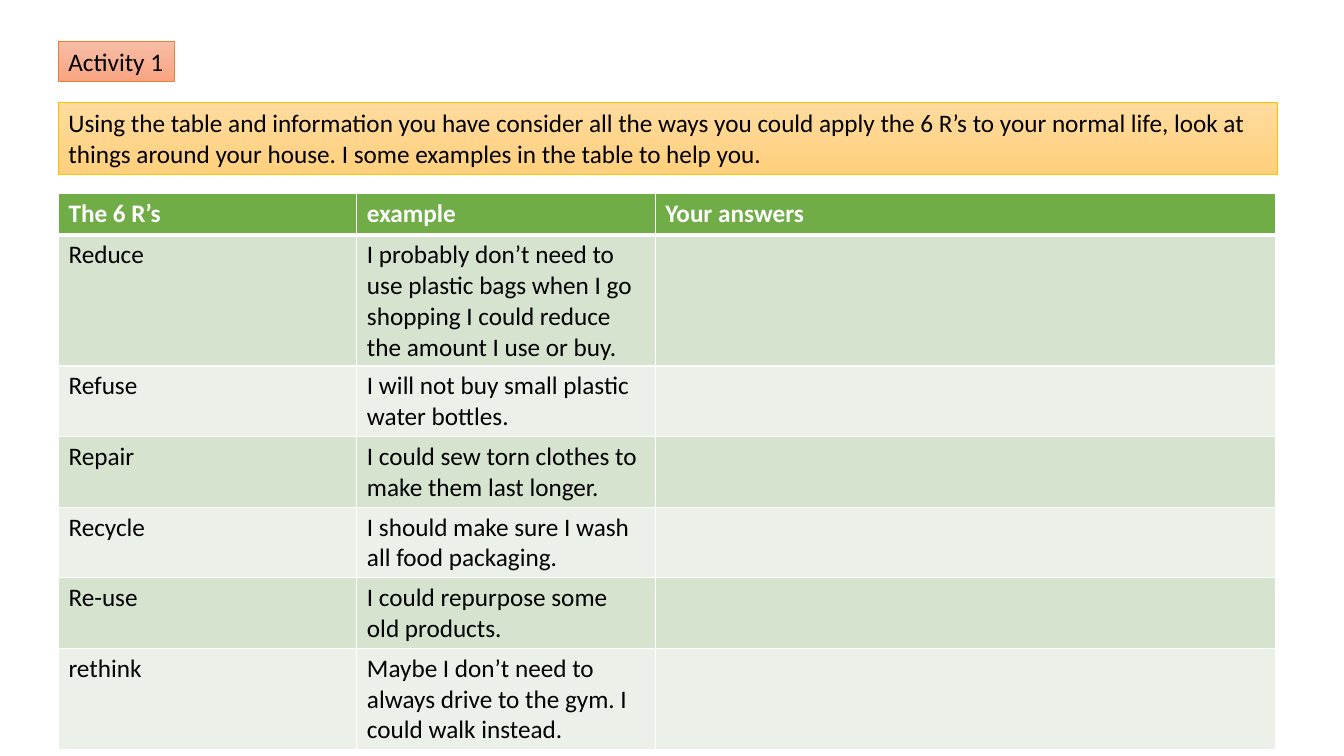
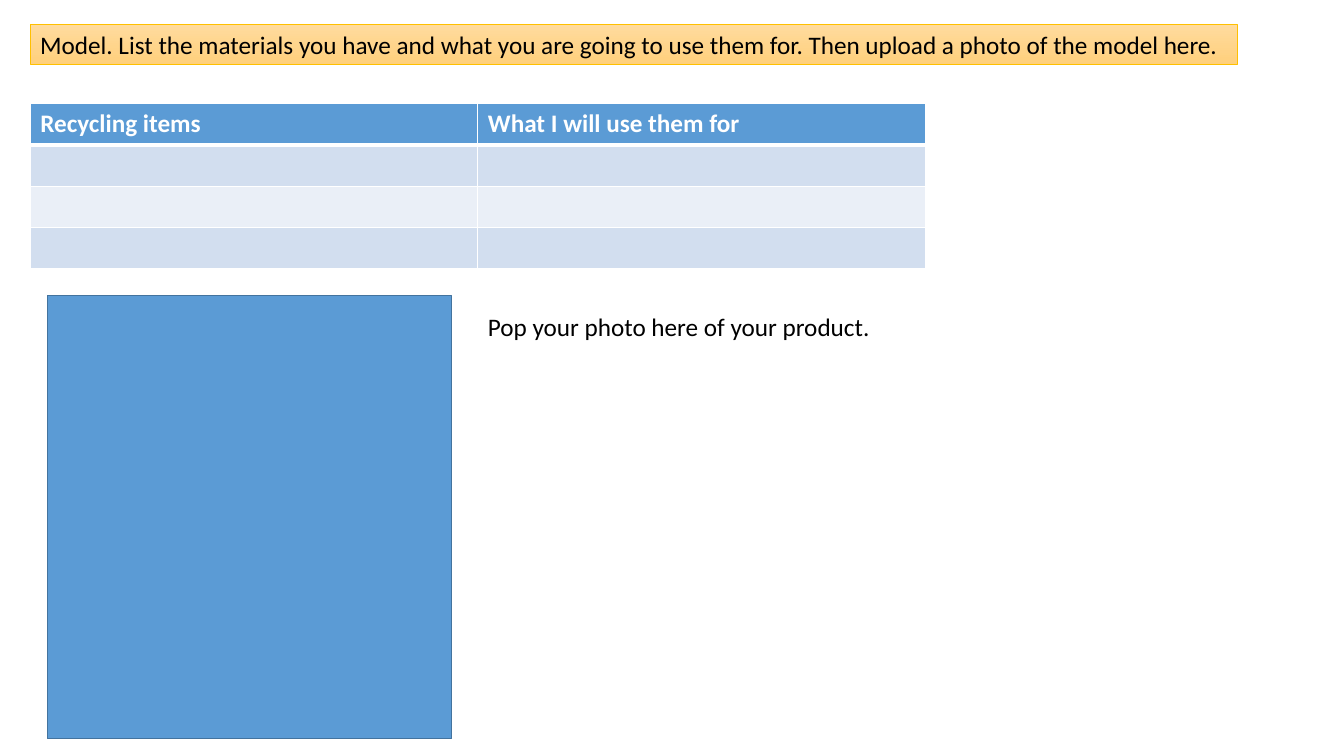
from lxml.etree import SubElement
from pptx import Presentation
from pptx.dml.color import RGBColor
from pptx.enum.shapes import MSO_SHAPE
from pptx.enum.text import MSO_ANCHOR, MSO_AUTO_SIZE
from pptx.oxml.ns import qn
from pptx.util import Pt

PX = 9144  # 100 px to the inch
ROW_H = 41
LABEL_H = 40

BLACK = RGBColor(0x00, 0x00, 0x00)
WHITE = RGBColor(0xFF, 0xFF, 0xFF)
BLUE = RGBColor(0x5B, 0x9B, 0xD5)
BLUE_EDGE = RGBColor(0x43, 0x73, 0x9E)

# Label styles: gradient top, gradient bottom, outline
GOLD = (RGBColor(0xFF, 0xDB, 0x9E), RGBColor(0xFF, 0xD0, 0x7C), RGBColor(0xFF, 0xC0, 0x00))
ORANGE = (RGBColor(0xF7, 0xBD, 0xA5), RGBColor(0xF8, 0xA5, 0x82), RGBColor(0xED, 0x7D, 0x31))

# Table styles: header, odd rows, even rows
GREEN_TABLE = (RGBColor(0x70, 0xAD, 0x47), RGBColor(0xD5, 0xE3, 0xCF), RGBColor(0xEB, 0xF1, 0xE9))
BLUE_TABLE = (BLUE, RGBColor(0xD2, 0xDE, 0xEF), RGBColor(0xEA, 0xEF, 0xF7))

SIX_RS = [
    ("The 6 R’s", "example", "Your answers"),
    ("Reduce", "I probably don’t need to use plastic bags when I go shopping "
               "I could reduce the amount I use or buy.", ""),
    ("Refuse", "I will not buy small plastic water bottles.", ""),
    ("Repair", "I could sew torn clothes to make them last longer.", ""),
    ("Recycle", "I should make sure I wash all food packaging.", ""),
    ("Re-use", "I could repurpose some old products.", ""),
    ("rethink", "Maybe I don’t need to always drive to the gym. I could walk instead.", ""),
]
MATERIALS = [("Recycling items", "What I will use them for")] + [("", "")] * 3


def emu(*lengths):
    return [length * PX for length in lengths]


def set_font(p, color=BLACK, bold=False):
    p.font.name = "Calibri"
    p.font.size = Pt(18)
    p.font.bold = bold
    p.font.color.rgb = color


def add_label(s, box, text, style=None, wrap=False):
    """Text box, with a gradient and an outline if a style is given."""
    sp = s.shapes.add_textbox(*emu(*box))
    if style:
        top, bottom, edge = style
        sp.fill.gradient()
        sp.fill.gradient_angle = 270
        for stop, color in zip(sp.fill.gradient_stops, (top, bottom)):
            stop.color.rgb = color
        sp.line.color.rgb = edge
        sp.line.width = Pt(0.5)
    tf = sp.text_frame
    tf.word_wrap = wrap
    tf.auto_size = MSO_AUTO_SIZE.SHAPE_TO_FIT_TEXT
    tf.text = text
    set_font(tf.paragraphs[0])


def set_borders(cell, bottom):
    """White borders; they must come before the fill in the cell's XML."""
    tc_pr = cell._tc.get_or_add_tcPr()
    for side, width in (("L", 1), ("R", 1), ("T", 1), ("B", bottom)):
        ln = SubElement(tc_pr, qn(f"a:ln{side}"), w=str(Pt(width)))
        fill = SubElement(ln, qn("a:solidFill"))
        SubElement(fill, qn("a:srgbClr"), val=str(WHITE))


def add_grid(s, left, top, widths, rows, style):
    """Banded table with a header row; rows grow with their text."""
    header, odd, even = style
    frame = s.shapes.add_table(len(rows), len(widths),
                               *emu(left, top, sum(widths), ROW_H * len(rows)))
    table = frame.table
    for column, width in zip(table.columns, widths):
        column.width = width * PX
    for i, row in enumerate(rows):
        is_header = i == 0
        color = header if is_header else odd if i % 2 else even
        for j, text in enumerate(row):
            cell = table.cell(i, j)
            set_borders(cell, 3 if is_header else 1)
            cell.fill.solid()
            cell.fill.fore_color.rgb = color
            cell.vertical_anchor = MSO_ANCHOR.TOP
            cell.text = text
            set_font(cell.text_frame.paragraphs[0], WHITE if is_header else BLACK, is_header)


def add_photo_area(s, box):
    sp = s.shapes.add_shape(MSO_SHAPE.RECTANGLE, *emu(*box))
    sp.shadow.inherit = False
    sp.fill.solid()
    sp.fill.fore_color.rgb = BLUE
    sp.line.color.rgb = BLUE_EDGE
    sp.line.width = Pt(1)


def activity_slide(s, left, top):
    # Instructions and activity name
    add_label(s, (left, top + 61, 1209, 71),
              "Using the table and information you have consider all the ways you could "
              "apply the 6 R’s to your normal life, look at things around your house. "
              "I some examples in the table to help you.", GOLD, wrap=True)
    add_label(s, (left, top, 115, LABEL_H), "Activity 1", ORANGE)
    # Answers
    add_grid(s, left, top + 151, (296, 296, 615), SIX_RS, GREEN_TABLE)


def model_slide(s, left, top):
    # Instructions
    add_label(s, (left, top, 1197, LABEL_H),
              "Model. List the materials you have and what you are going to use them for. "
              "Then upload a photo of the model here.", GOLD)
    # Materials
    add_grid(s, left, top + 79, (444, 444), MATERIALS, BLUE_TABLE)
    # Photo
    add_photo_area(s, (left + 17, top + 269, 401, 440))
    add_label(s, (left + 444, top + 280, 404, LABEL_H), "Pop your photo here of your product.")


def main():
    prs = Presentation()
    prs.slide_width, prs.slide_height = emu(1333, 750)
    blank = prs.slide_layouts[6]
    activity_slide(prs.slides.add_slide(blank), 58, 41)
    model_slide(prs.slides.add_slide(blank), 30, 24)
    prs.save("out.pptx")


if __name__ == "__main__":
    main()
